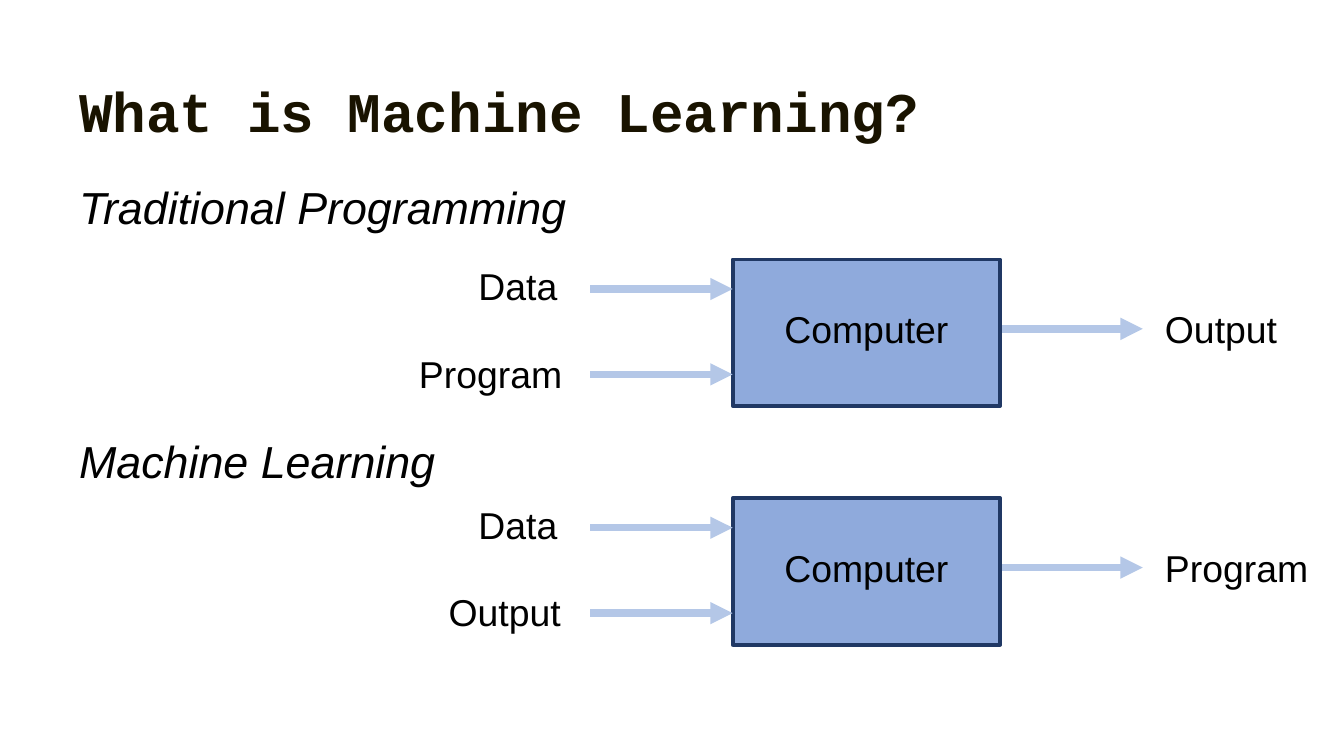
"""Build a slide comparing traditional programming with machine learning."""
import pptx
import pptx.dml.color
import pptx.enum.shapes
import pptx.enum.text
import pptx.oxml.ns
import pptx.util
from lxml import etree

Pt = pptx.util.Pt
RGBColor = pptx.dml.color.RGBColor
ALIGN = pptx.enum.text.PP_ALIGN
ANCHOR = pptx.enum.text.MSO_ANCHOR
qn = pptx.oxml.ns.qn

TITLE_INK = RGBColor(0x19, 0x13, 0x00)
INK = RGBColor(0x00, 0x00, 0x00)
BOX_FILL = RGBColor(0x8F, 0xAA, 0xDC)
BOX_EDGE = RGBColor(0x20, 0x38, 0x64)
ARROW = RGBColor(0xB4, 0xC7, 0xE7)

LEFT = 35.3
BOX_LEFT, BOX_WIDTH, BOX_HEIGHT = 392.5, 143.3, 78.5
BOX_RIGHT = BOX_LEFT + BOX_WIDTH
ARROW_LENGTH = 76.4
LABEL_HEIGHT = 31.5

deck = pptx.Presentation()
deck.slide_width, deck.slide_height = Pt(720), Pt(405)
slide = deck.slides.add_slide(deck.slide_layouts[6])


def add_text(text, left, top, width, height, size=20, font="Arial", color=INK,
             bold=False, italic=False, align=ALIGN.LEFT, anchor=ANCHOR.TOP):
    label = slide.shapes.add_textbox(Pt(left), Pt(top), Pt(width), Pt(height))
    frame = label.text_frame
    frame.word_wrap = True
    frame.vertical_anchor = anchor
    paragraph = frame.paragraphs[0]
    paragraph.alignment = align
    run = paragraph.add_run()
    run.text = text
    run.font.name, run.font.size = font, Pt(size)
    run.font.bold, run.font.italic = bold, italic
    run.font.color.rgb = color


def add_arrow(left, y):
    arrow = slide.shapes.add_connector(
        pptx.enum.shapes.MSO_CONNECTOR.STRAIGHT,
        Pt(left), Pt(y), Pt(left + ARROW_LENGTH), Pt(y))
    arrow.line.color.rgb = ARROW
    arrow.line.width = Pt(4)
    etree.SubElement(arrow.line._get_or_add_ln(), qn("a:tailEnd"), type="triangle")
    etree.SubElement(arrow._element.spPr, qn("a:effectLst"))


add_text("What is Machine Learning?", LEFT, 2.2, 645, 78.5, size=30, font="Courier New",
         color=TITLE_INK, bold=True, anchor=ANCHOR.BOTTOM)

flows = [
    ("Traditional Programming", 92.9, 139, "Program", 217.4, "Output"),
    ("Machine Learning", 229, 266.9, "Output", 233.3, "Program"),
]
for heading, heading_top, box_top, second_input, second_left, result in flows:
    add_text(heading, LEFT, heading_top, 348.5, 36, size=24, italic=True)

    add_arrow(BOX_RIGHT, box_top + 37.2)
    computer = slide.shapes.add_shape(
        pptx.enum.shapes.MSO_SHAPE.RECTANGLE,
        Pt(BOX_LEFT), Pt(box_top), Pt(BOX_WIDTH), Pt(BOX_HEIGHT))
    computer.shadow.inherit = False
    computer.fill.solid()
    computer.fill.fore_color.rgb = BOX_FILL
    computer.line.color.rgb = BOX_EDGE
    computer.line.width = Pt(2)
    for input_offset in (15.8, 61.6):
        add_arrow(BOX_LEFT - ARROW_LENGTH, box_top + input_offset)

    add_text("Data", 249.2, box_top - 1.5, 85, LABEL_HEIGHT)
    add_text(second_input, second_left, box_top + 45.4, 117.4, LABEL_HEIGHT)
    add_text(result, 617, box_top + 21.5, 114.5, LABEL_HEIGHT)
    add_text("Computer", BOX_LEFT, box_top + 21.6, BOX_WIDTH, LABEL_HEIGHT,
             align=ALIGN.CENTER)

deck.save("out.pptx")
